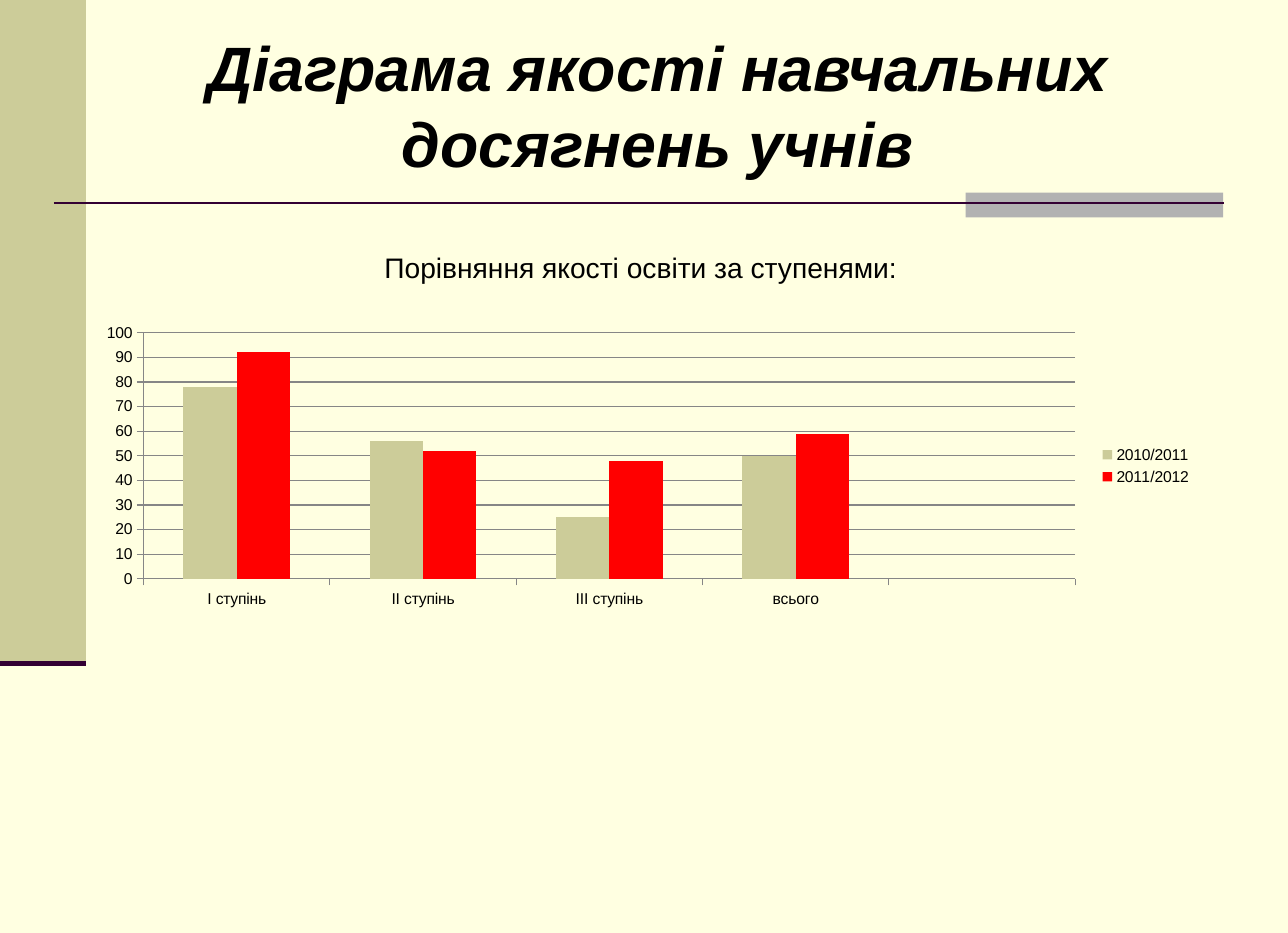
from pptx import Presentation
from pptx.chart.data import CategoryChartData
from pptx.dml.color import RGBColor
from pptx.enum.chart import XL_CHART_TYPE, XL_LEGEND_POSITION, XL_TICK_MARK
from pptx.enum.shapes import MSO_CONNECTOR, MSO_SHAPE
from pptx.enum.text import MSO_ANCHOR, PP_ALIGN
from pptx.oxml.ns import qn
from pptx.util import Pt
from lxml import etree

COLUMNS = XL_CHART_TYPE.COLUMN_CLUSTERED
RIGHT = XL_LEGEND_POSITION.RIGHT
OUT = XL_TICK_MARK.OUTSIDE
RECT = MSO_SHAPE.RECTANGLE
LINE = MSO_CONNECTOR.STRAIGHT
MIDDLE = MSO_ANCHOR.MIDDLE
CENTER = PP_ALIGN.CENTER

COLORS = {"page": "FFFFE1", "sand": "CCCC99", "gray": "B2B2B2",
          "plum": "330033", "red": "FF0000", "ink": "000000", "grid": "868686"}

TITLE = "Діаграма якості навчальних досягнень учнів"
LEAD = "Порівняння якості освіти за ступенями:"
STAGES = ["І ступінь", "ІІ ступінь", "ІІІ ступінь", "всього", ""]
YEARS = [("2010/2011", "sand", (78, 56, 25, 50, None)),
         ("2011/2012", "red", (92, 52, 48, 59, None))]

PAGE = (822.24, 595.44)
BANDS = [("sand", (0, 0, 54.9, 423.4)), ("gray", (616.5, 123, 164.4, 15.8))]
RULES = [((34.4, 129.7, 781.1, 129.7), 1.5), ((0, 423.4, 54.9, 423.4), 3.5)]
TITLE_BOX = (48.2, 14.4, 743, 104.4)
LEAD_BOX = (238.3, 156.2, 345.6, 28.8)
CHART_BOX = (54, 203, 714.2, 188.6)

TITLE_FONT = {"name": "Arial", "size": Pt(40), "bold": True, "italic": True}
LEAD_FONT = {"name": "Arial", "size": Pt(18)}
CHART_FONT = {"name": "Arial", "size": Pt(10)}


def rgb(name):
    """Return the named colour."""
    return RGBColor.from_string(COLORS[name])


def pts(box):
    """Turn numbers into point lengths."""
    return [Pt(n) for n in box]


def paint(fill, name):
    """Fill with one solid colour."""
    fill.solid()
    fill.fore_color.rgb = rgb(name)


def style(font, look):
    """Apply a dict of font values in ink colour."""
    for key, value in look.items():
        setattr(font, key, value)
    font.color.rgb = rgb("ink")


def add_band(slide, color, box):
    """Draw a plain filled rectangle."""
    band = slide.shapes.add_shape(RECT, *pts(box))
    band.shadow.inherit = False
    paint(band.fill, color)
    band.line.fill.background()


def add_rule(slide, ends, width):
    """Draw a straight line without a shadow."""
    rule = slide.shapes.add_connector(LINE, *pts(ends))
    rule.line.color.rgb = rgb("plum")
    rule.line.width = Pt(width)
    etree.SubElement(rule.element.spPr, qn("a:effectLst"))


def set_title(slide):
    """Place and format the title."""
    title = slide.shapes.title
    title.left, title.top, title.width, title.height = pts(TITLE_BOX)
    frame = title.text_frame
    frame.text = TITLE
    frame.vertical_anchor = MIDDLE
    frame.word_wrap = True
    frame.paragraphs[0].alignment = CENTER
    style(frame.paragraphs[0].runs[0].font, TITLE_FONT)


def add_lead(slide):
    """Add the line of text above the chart."""
    frame = slide.shapes.add_textbox(*pts(LEAD_BOX)).text_frame
    frame.text = LEAD
    frame.word_wrap = False
    style(frame.paragraphs[0].runs[0].font, LEAD_FONT)


def add_columns(slide):
    """Add the clustered column chart."""
    data = CategoryChartData()
    data.categories = STAGES
    for year, _, marks in YEARS:
        data.add_series(year, marks)
    chart = slide.shapes.add_chart(COLUMNS, *pts(CHART_BOX), data).chart
    style(chart.font, CHART_FONT)
    chart.has_title = False
    chart.has_legend = True
    chart.legend.position = RIGHT
    chart.legend.include_in_layout = False

    plot = chart.plots[0]
    plot.gap_width = 150
    plot.overlap = 0
    plot.vary_by_categories = False
    for bars, (_, color, _) in zip(plot.series, YEARS):
        paint(bars.format.fill, color)

    scale = chart.value_axis
    scale.minimum_scale, scale.maximum_scale, scale.major_unit = 0, 100, 10
    scale.has_major_gridlines = True
    for axis in (scale, chart.category_axis):
        axis.major_tick_mark = OUT
    for part in (scale, chart.category_axis, scale.major_gridlines):
        part.format.line.color.rgb = rgb("grid")
        part.format.line.width = Pt(0.75)


deck = Presentation()
deck.slide_width, deck.slide_height = pts(PAGE)
slide = deck.slides.add_slide(deck.slide_layouts[5])
paint(slide.background.fill, "page")
for color, box in BANDS:
    add_band(slide, color, box)
for ends, width in RULES:
    add_rule(slide, ends, width)
set_title(slide)
add_lead(slide)
add_columns(slide)
deck.save("out.pptx")
